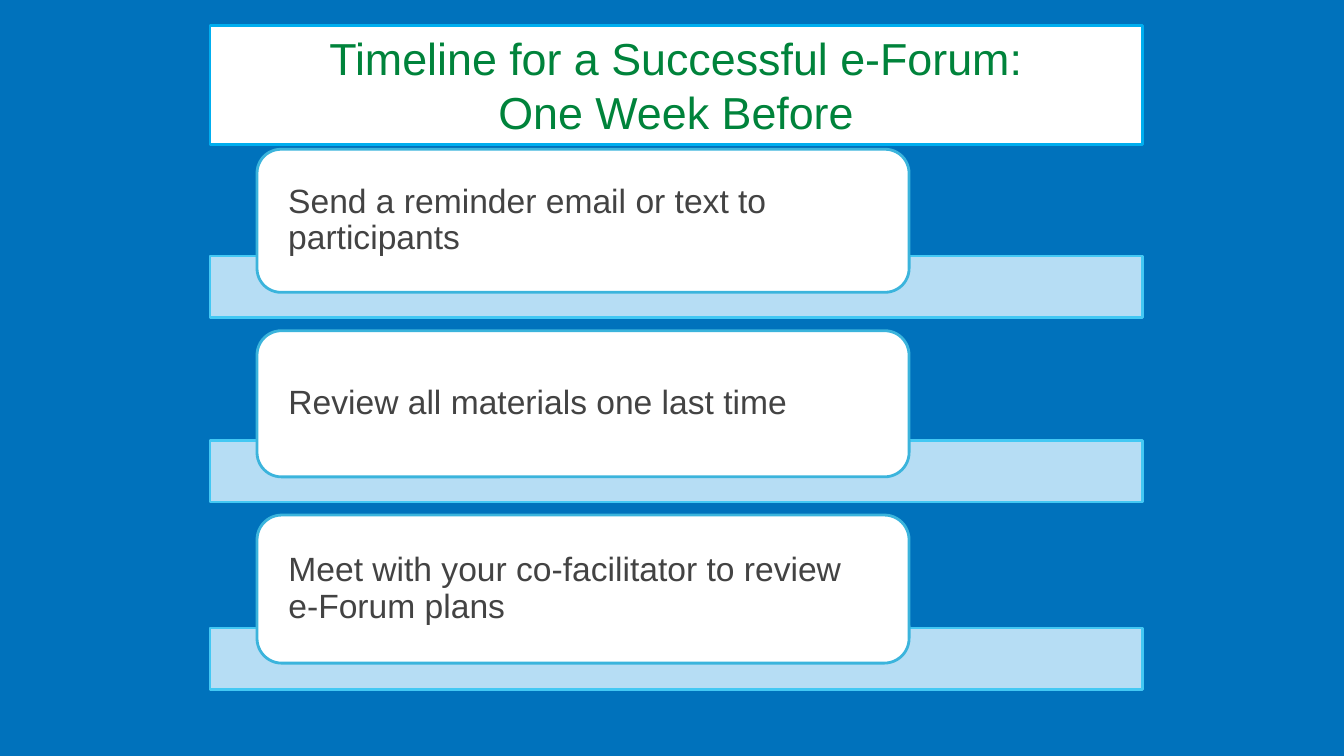
"""Build the one-week-before timeline slide for an e-Forum."""
import pptx
import pptx.util
import pptx.dml.color
import pptx.enum.shapes
import pptx.enum.text
import pptx.oxml

Pt = pptx.util.Pt
Kind = pptx.enum.shapes.MSO_SHAPE
Align = pptx.enum.text.PP_ALIGN
Anchor = pptx.enum.text.MSO_ANCHOR

HUES = {
    "back": "0072BC", "white": "FFFFFF", "edge": "00AEEF", "title": "00833B",
    "bar": "CDEBFB", "rim": "43C8F3", "card": "3BB4DC", "text": "434343",
}
LEFT, WIDE = 150, 666
STEPS = [
    ("Send a reminder email or text to participants", 106.6, 102.2, 182.9),
    ("Review all materials one last time", 236.2, 104.4, 314.6),
    ("Meet with your co-facilitator to review e-Forum plans", 367.9, 105.8, 448.6),
]


def paint(shape, fill, line):
    shape.fill.solid()
    shape.fill.fore_color.rgb = hue(fill)
    shape.line.color.rgb = hue(line)
    shape.line.width = Pt(2)


def hue(name):
    return pptx.dml.color.RGBColor.from_string(HUES[name])


deck = pptx.Presentation()
deck.slide_width, deck.slide_height = Pt(960), Pt(540)
slide = deck.slides.add_slide(deck.slide_layouts[5])
slide.background.fill.solid()
slide.background.fill.fore_color.rgb = hue("back")

title = slide.shapes.title
place = {"left": LEFT, "top": 18, "width": WIDE, "height": 85}
for key, value in place.items():
    setattr(title, key, Pt(value))
paint(title, "white", "edge")
frame = title.text_frame
frame.text = "Timeline for a Successful e-Forum:\vOne Week Before"
frame.auto_size = pptx.enum.text.MSO_AUTO_SIZE.NONE
head = frame.paragraphs[0]
head.alignment = Align.CENTER
for run in head.runs:
    for key, value in {"name": "Arial", "size": Pt(32)}.items():
        setattr(run.font, key, value)
    run.font.color.rgb = hue("title")

group = slide.shapes.add_group_shape()
for words, top, high, low in STEPS:
    bar = group.shapes.add_shape(
        Kind.RECTANGLE, Pt(LEFT), Pt(low), Pt(WIDE), Pt(44))
    bar.shadow.inherit = False
    paint(bar, "bar", "rim")
    tint = bar.fill._xPr.solidFill.srgbClr
    alpha = pptx.oxml.parse_xml(
        '<a:alpha xmlns:a="http://schemas.openxmlformats.org/drawingml/2006/main"'
        ' val="89000"/>')
    tint.append(alpha)

    card = group.shapes.add_shape(
        Kind.ROUNDED_RECTANGLE, Pt(183.6), Pt(top), Pt(465.8), Pt(high))
    card.shadow.inherit = False
    card.adjustments[0] = 0.167
    paint(card, "white", "card")
    frame = card.text_frame
    form = {
        "word_wrap": True, "vertical_anchor": Anchor.MIDDLE,
        "margin_left": Pt(17.28), "margin_right": Pt(17.28),
        "margin_top": 0, "margin_bottom": 0,
    }
    for key, value in form.items():
        setattr(frame, key, value)
    frame.text = words
    para = frame.paragraphs[0]
    para.alignment = Align.LEFT
    para.line_spacing = 0.9
    font = para.runs[0].font
    for key, value in {"name": "Arial", "size": Pt(24)}.items():
        setattr(font, key, value)
    font.color.rgb = hue("text")

deck.save("out.pptx")
